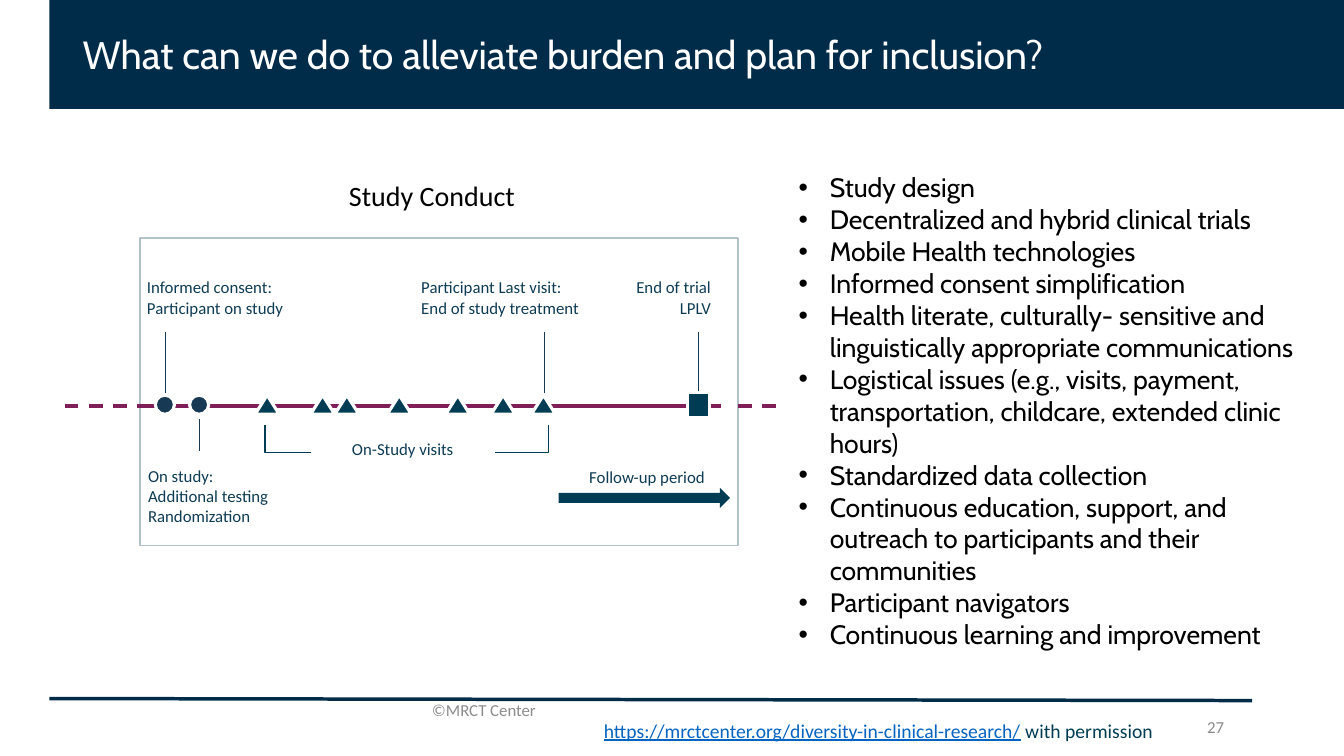
from pptx import Presentation
from pptx.dml.color import RGBColor
from pptx.enum.dml import MSO_LINE as Dash
from pptx.enum.shapes import MSO_CONNECTOR as Conn, MSO_SHAPE as Shape
from pptx.enum.text import MSO_ANCHOR as Anchor, MSO_AUTO_SIZE as Auto, PP_ALIGN as Align
from pptx.oxml.ns import qn
from pptx.util import Pt
from lxml.etree import SubElement

PX = 9144
NAVY, TEAL, DARK, PLUM = "012C49", "003D54", "183954", "801E5A"
WHITE, BLACK, GRAY, BLUE, INK, EDGE = "FFFFFF", "000000", "8C8C8C", "0563C1", "0F3C55", "B2C1CA"

TITLE = "What can we do to alleviate burden and plan for inclusion?"
ITEMS = [
    "Study design",
    "Decentralized and hybrid clinical trials",
    "Mobile Health technologies",
    "Informed consent simplification",
    "Health literate, culturally- sensitive and linguistically appropriate communications",
    "Logistical issues (e.g., visits, payment, transportation, childcare, extended clinic hours)",
    "Standardized data collection",
    "Continuous education, support, and outreach to participants and their communities",
    "Participant navigators",
    "Continuous learning and improvement",
]
SOURCE = [("https://mrctcenter.org/diversity-in-clinical-research/", BLUE, True),
          (" with permission", TEAL, False)]

LABELS = [
    ("Study Conduct", (305, 172, 247, 40), 20, BLACK, Align.CENTER),
    ("Informed consent: Participant on study", (136, 270, 204, 58), 12, INK, Align.LEFT),
    ("On study:\nAdditional testing\nRandomization", (137, 457, 194, 81), 12, INK, Align.LEFT),
    ("Participant Last visit:\nEnd of study treatment", (408, 270, 233, 58), 12, INK, Align.LEFT),
    ("End of trial\nLPLV", (566, 270, 149, 58), 12, INK, Align.RIGHT),
    ("On-Study visits", (308, 430, 183, 35), 12, INK, Align.CENTER),
    ("Follow-up period", (547, 458, 162, 35), 12, INK, Align.RIGHT),
    ("©MRCT Center", (410, 689, 140, 30), 12, GRAY, Align.CENTER),
    ("27", (1037, 706, 187, 30), 12, GRAY, Align.RIGHT),
]

AXIS = 403
LINES = [
    (49, 693, 1242, 695, NAVY, 2.5, None),
    (136, AXIS, 715, AXIS, PLUM, 2.5, None),
    (64, AXIS, 139, AXIS, PLUM, 2.5, Dash.DASH),
    (732, AXIS, 771, AXIS, PLUM, 2.5, Dash.DASH),
    (198, 416, 198, 447, DARK, 1, None),
] + [(x, 329, x, 390, DARK, 1, None) for x in (164, 540, 693)]
HOOKS = [[(263, 422), (263, 449), (308, 449)],
         [(544, 422), (544, 449), (491, 449)]]
STARTS = [154, 188]
VISITS = [253, 308, 332, 384, 442, 487, 527]

deck = Presentation()
deck.slide_width, deck.slide_height = 1333 * PX, 750 * PX
slide = deck.slides.add_slide(deck.slide_layouts[1])
parts = slide.shapes


def paint(hue):
    return RGBColor.from_string(hue)


def assign(item, **values):
    for name, value in values.items():
        setattr(item, name, value)


def place(item, box):
    assign(item, **{key: n * PX for key, n in zip(("left", "top", "width", "height"), box)})


def stroke(item, hue, size):
    item.line.color.rgb = paint(hue)
    item.line.width = Pt(size)


def shape(kind, box, fill=None, edge=None, size=1):
    item = parts.add_shape(kind, *[n * PX for n in box])
    item.shadow.inherit = False
    if fill:
        item.fill.solid()
        item.fill.fore_color.rgb = paint(fill)
    else:
        item.fill.background()
    if edge:
        stroke(item, edge, size)
    else:
        item.line.fill.background()
    return item


def link(x1, y1, x2, y2, hue, size, dash):
    item = parts.add_connector(Conn.STRAIGHT, x1 * PX, y1 * PX, x2 * PX, y2 * PX)
    stroke(item, hue, size)
    if dash:
        item.line.dash_style = dash
    SubElement(item._element.spPr, qn("a:effectLst"))


def add_run(para, text, size, hue, face="Calibri", under=None):
    run = para.add_run()
    run.text = text
    assign(run.font, size=Pt(size), name=face, underline=under)
    run.font.color.rgb = paint(hue)


def write(frame, lines, size, hue, align=Align.LEFT, face="Calibri", bullet=False):
    assign(frame, word_wrap=True, auto_size=Auto.NONE)
    for i, line in enumerate(lines):
        para = frame.add_paragraph() if i else frame.paragraphs[0]
        if bullet:
            props = para._p.get_or_add_pPr()
            props.set("marL", str(31 * PX))
            props.set("indent", str(-31 * PX))
            SubElement(props, qn("a:buFont"), typeface="Arial")
            SubElement(props, qn("a:buChar"), char="•")
        assign(para, alignment=align, space_before=Pt(0), line_spacing=1.0)
        add_run(para, line, size, hue, face)


def label(box):
    return parts.add_textbox(*[n * PX for n in box]).text_frame


band = shape(Shape.RECTANGLE, (49, 0, 1284, 108), NAVY)
parts._spTree.insert(2, band._element)

head, body = parts.title, slide.placeholders[1]
place(head, (72, 0, 1085, 107))
write(head.text_frame, [TITLE], 28, WHITE, face="Cabin")
head.text_frame.vertical_anchor = Anchor.MIDDLE
place(body, (782, 165, 534, 490))
write(body.text_frame, ITEMS, 19, BLACK, face="Cabin", bullet=True)

shape(Shape.RECTANGLE, (139, 236, 593, 305), None, EDGE)
for line in LINES:
    link(*line)
for first, *rest in HOOKS:
    path = parts.build_freeform(*first, scale=PX)
    path.add_line_segments(rest, close=False)
    hook = path.convert_to_shape()
    hook.shadow.inherit = False
    hook.fill.background()
    stroke(hook, TEAL, 1)

for x in STARTS:
    shape(Shape.OVAL, (x, 392, 19, 19), DARK, WHITE, 2.25)
for x in VISITS:
    shape(Shape.ISOSCELES_TRIANGLE, (x, 392, 24, 19), TEAL, WHITE, 2.25)
shape(Shape.RECTANGLE, (682, 389, 22, 25), TEAL, WHITE, 2.25)
shape(Shape.RIGHT_ARROW, (554, 484, 170, 20), TEAL)

for text, box, size, hue, align in LABELS:
    write(label(box), text.split("\n"), size, hue, align)

credit = label((589, 708, 582, 34))
credit.word_wrap = True
for text, hue, under in SOURCE:
    add_run(credit.paragraphs[0], text, 14, hue, under=under)

deck.save("out.pptx")
